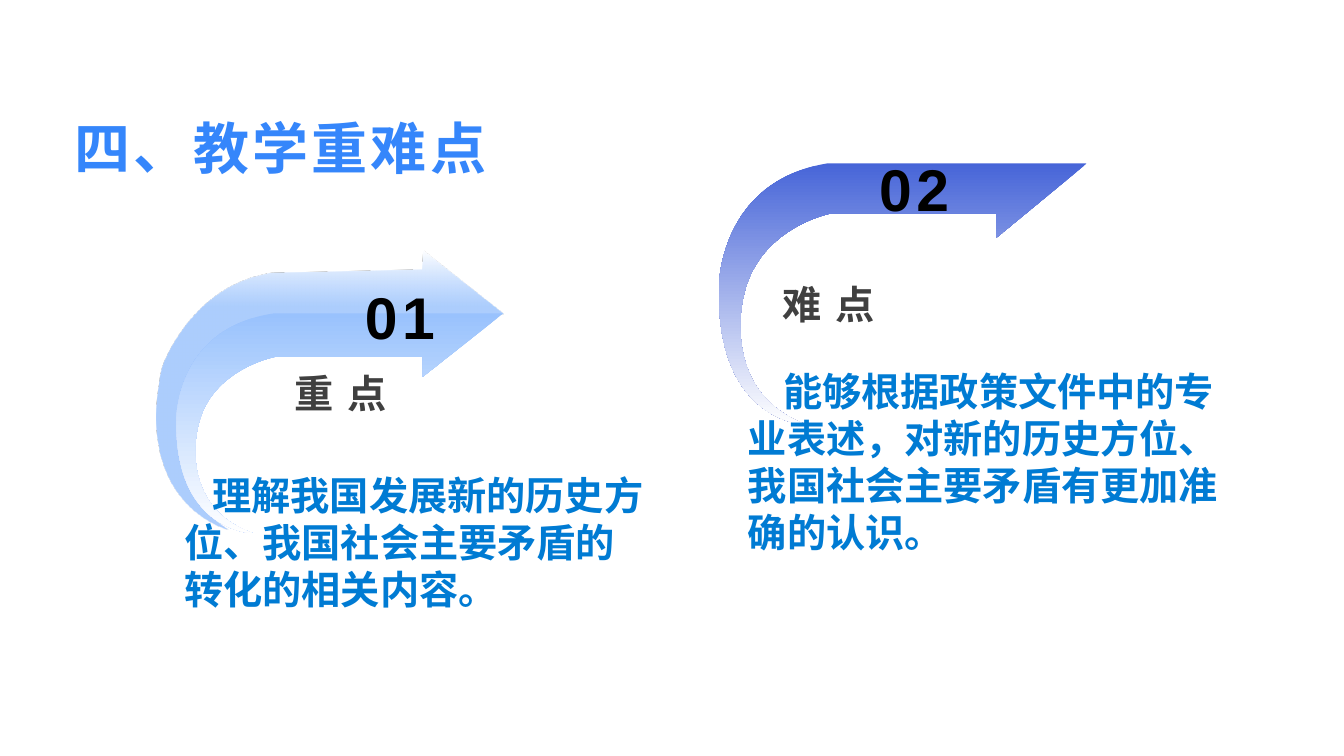
from copy import deepcopy

from lxml import etree
from pptx import Presentation
from pptx.dml.color import RGBColor
from pptx.enum.text import MSO_ANCHOR
from pptx.oxml.ns import qn
from pptx.util import Inches, Pt

MIDDLE = MSO_ANCHOR.MIDDLE
HAN, LATIN = "Noto Sans CJK SC", "Arial"
COLORS = {"title": "3586FB", "body": "007BD3", "label": "404040", "number": "000000",
          "sky": "99C2FD", "royal": "4765D8", "white": "FFFFFF"}
DOWN, UP = 270, 90

# Two numbers are a corner; four are the control and the end of a curve.
BACK = [(41.9, 24.9), (49.9, 31.2), (28, 31.2), (20.9, 31.8, 18.7, 37.1),
        (14.5, 47.2, 22.7, 52.5), (13.1, 50.2, 16.1, 36.4),
        (19, 28.1, 27.2, 27.1), (41.8, 26.8)]
FRONT = [(49.9, 31.1), (41.9, 37.4), (41.9, 35.4), (27.3, 35.4),
         (21, 36.6, 19.7, 42.1), (17.4, 50.2, 25.1, 52.9),
         (17.3, 52.8, 17.5, 41.6), (17.4, 32.6, 27.1, 31.1)]
RIGHT = [(107.8, 16.2), (98.8, 23.6), (98.8, 21.2), (82.3, 21.2),
         (75.3, 22.6, 73.8, 29.2), (71.2, 38.8, 79.9, 42.1),
         (71.1, 42, 71.3, 28.6), (71.2, 18, 82.1, 16.2)]


def cell(n):
    """Length of n grid cells, ten to the inch."""
    return Inches(n / 10)


def bend(shape, steps):
    """Turn each pair of lines through a control point into one curve."""
    track = next(shape._element.iter(qn("a:path")))
    lines = iter(track.findall(qn("a:lnTo")))
    start = track[0][0]
    for step in steps:
        line = next(lines)
        if len(step) == 4:
            last = next(lines)
            curve = etree.Element(qn("a:cubicBezTo"))
            track.replace(line, curve)
            track.remove(last)
            curve.extend([deepcopy(start), line[0], last[0]])
            line = curve
        start = line[-1]


class Page:
    # size, font, colour, letter spacing, space after
    STYLES = {"title": (40, HAN, "title", 2.4, 0), "number": (42, LATIN, "number", 3.4, 8),
              "label": (28, LATIN, "label", 2, 0), "body": (28, HAN, "body", 0, 0)}

    def __init__(self, deck):
        self.slide = deck.slides.add_slide(deck.slide_layouts[6])

    def arrow(self, outline, color, angle, begin=0, alpha=None):
        points = [(cell(step[i]), cell(step[i + 1]))
                  for step in outline for i in range(0, len(step), 2)]
        pen = self.slide.shapes.build_freeform(*points[0], scale=1.0)
        pen.add_line_segments(points[1:], close=True)
        shape = pen.convert_to_shape()
        bend(shape, outline[1:])
        shape.shadow.inherit = False
        shape.line.fill.background()
        fill = shape.fill
        fill.gradient()
        fill.gradient_angle = angle
        for stop, name, place in zip(fill.gradient_stops, (color, "white"), (begin, 1)):
            stop.color.rgb = RGBColor.from_string(COLORS[name])
            stop.position = place
        if alpha:
            tint = next(shape._element.spPr.iter(qn("a:srgbClr")))
            etree.SubElement(tint, qn("a:alpha"), val=str(alpha * 1000))

    def text(self, words, style, box, indent=0, inset=None):
        size, font, color, gap, after = self.STYLES[style]
        frame = self.slide.shapes.add_textbox(*map(cell, box)).text_frame
        frame.word_wrap = True
        frame.vertical_anchor = MIDDLE
        if inset:
            frame.margin_left = frame.margin_right = cell(inset[0])
            frame.margin_top = frame.margin_bottom = cell(inset[1])
        frame.text = words
        para = frame.paragraphs[0]
        para.space_after = Pt(after)
        if indent:
            para._p.get_or_add_pPr().set("indent", str(cell(indent)))
        for run in para.runs:
            run.font.size = Pt(size)
            run.font.bold = True
            run.font.color.rgb = RGBColor.from_string(COLORS[color])
            run.font.name = font
            props = run._r.get_or_add_rPr()
            props.set("spc", str(round(gap * 100)))
            etree.SubElement(props, qn("a:ea"), typeface=HAN)


def main():
    deck = Presentation()
    deck.slide_width, deck.slide_height = Inches(13.33), Inches(7.5)
    page = Page(deck)
    page.text("四、教学重难点", "title", (6.7, 10.4, 120, 8.3), inset=(0.7, 0.3))

    page.arrow(BACK, "sky", UP, begin=0.8, alpha=80)
    page.arrow(FRONT, "sky", DOWN)
    page.text("01", "number", (35.2, 27.1, 9.6, 8.6))
    page.text("理解我国发展新的历史方位、我国社会主要矛盾的转化的相关内容。",
              "body", (17.3, 43.5, 47.6, 20.6), indent=2.8)
    page.text("重 点", "label", (25.9, 35.8, 28.4, 6.3), indent=2.3)

    page.arrow(RIGHT, "royal", DOWN)
    page.text("02", "number", (86.2, 14.4, 9.6, 8.6))
    page.text("能够根据政策文件中的专业表述，对新的历史方位、我国社会主要矛盾有更加准确的认识。",
              "body", (73.2, 32.2, 49.1, 27.2), indent=3.5)
    page.text("难 点", "label", (73.2, 27, 28.4, 6.3), indent=3.4)
    deck.save("out.pptx")


if __name__ == "__main__":
    main()
